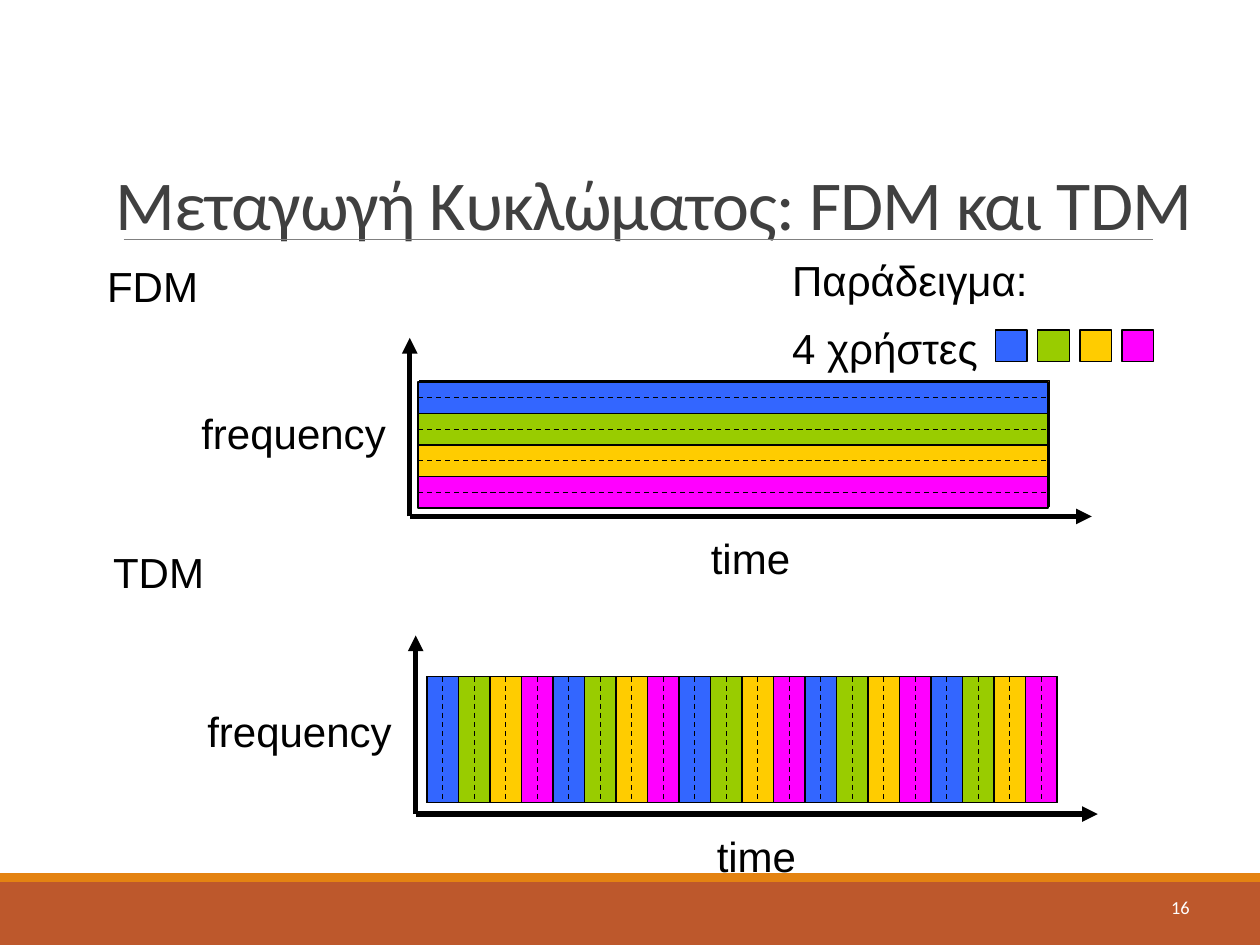
"""Build a slide that compares FDM and TDM circuit switching."""
import pptx
import pptx.util
import pptx.dml.color
import pptx.enum.dml
import pptx.enum.shapes
import pptx.enum.text
import pptx.oxml.ns
import lxml.etree

Cm = pptx.util.Cm
Pt = pptx.util.Pt
ALIGN = pptx.enum.text.PP_ALIGN
ANCHOR = pptx.enum.text.MSO_ANCHOR

HUES = {
    "black": "000000", "white": "FFFFFF", "title": "404040", "rule": "808080",
    "rust": "BD582C", "orange": "E48312", "blue": "3366FF", "green": "99CC00",
    "yellow": "FFCC00", "pink": "FF00FF",
}
USERS = ["blue", "green", "yellow", "pink"]
TITLE = "Μεταγωγή Κυκλώματος: FDM και TDM"
NOTES = [("4 χρήστες", 15.72, 6.38, 4.27), ("Παράδειγμα:", 15.72, 5.0, 5.26)]
PLOTS = [
    {"name": "FDM", "tag": (1.91, 5.13), "zero": (8.26, 10.41),
     "back": (8.46, 7.67), "grid": (8.43, 7.7), "rounds": 1, "across": True},
    {"name": "TDM", "tag": (2.03, 10.9), "zero": (8.38, 16.41),
     "back": (8.61, 13.64), "grid": (8.61, 13.64), "rounds": 5, "across": False},
]
WIDE, HIGH, STEP = 12.7, 2.54, 0.635
LABEL = {"size": Pt(24), "name": "Arial"}
PAGE = {"size": Pt(10.5), "name": "Calibri"}
HEAD = {"size": Pt(40), "name": "Calibri"}


def tint(name):
    return pptx.dml.color.RGBColor.from_string(HUES[name])


def apply(thing, look):
    for key, value in look.items():
        setattr(thing, key, value)


def write(frame, text, font, hue, box, para):
    apply(frame, box)
    line = frame.paragraphs[0]
    apply(line, para)
    run = line.add_run()
    run.text = text
    apply(run.font, font)
    run.font.color.rgb = tint(hue)
    return run


def label(slide, text, left, top, wide):
    shape = slide.shapes.add_textbox(Cm(left), Cm(top), Cm(wide), Cm(1.27))
    write(shape.text_frame, text, LABEL, "black", {"word_wrap": False}, {})


def block(slide, left, top, wide, high, hue, edge=True):
    kind = pptx.enum.shapes.MSO_SHAPE.RECTANGLE
    shape = slide.shapes.add_shape(kind, Cm(left), Cm(top), Cm(wide), Cm(high))
    shape.shadow.inherit = False
    shape.fill.solid()
    shape.fill.fore_color.rgb = tint(hue)
    if edge:
        shape.line.color.rgb = tint("black")
        shape.line.width = Pt(0.75)
    else:
        shape.line.fill.background()


def stroke(slide, start, end, hue="black", width=0.75, dash=False, arrow=False):
    kind = pptx.enum.shapes.MSO_CONNECTOR.STRAIGHT
    ends = [Cm(value) for value in (*start, *end)]
    line = slide.shapes.add_connector(kind, *ends)
    line.line.color.rgb = tint(hue)
    line.line.width = Pt(width)
    if dash:
        line.line.dash_style = pptx.enum.dml.MSO_LINE.DASH
    qn = pptx.oxml.ns.qn
    if arrow:
        pen = line.line._get_or_add_ln()
        lxml.etree.SubElement(pen, qn("a:tailEnd"), type="triangle")
    lxml.etree.SubElement(line._element.spPr, qn("a:effectLst"))


def frame(slide):
    block(slide, 0, 17.78, 25.4, 1.27, "rust", edge=False)
    block(slide, 0, 17.6, 25.4, 0.18, "orange", edge=False)
    stroke(slide, (2.49, 4.83), (23.24, 4.83), "rule", 0.5)
    title = slide.shapes.title
    apply(title, {"left": Cm(2.08), "top": Cm(1.88),
                  "width": Cm(23.52), "height": Cm(3.18)})
    box = {"vertical_anchor": ANCHOR.BOTTOM, "word_wrap": True,
           "auto_size": pptx.enum.text.MSO_AUTO_SIZE.NONE}
    para = {"alignment": ALIGN.LEFT, "line_spacing": 0.85}
    run = write(title.text_frame, TITLE, HEAD, "title", box, para)
    run.font._element.set("spc", "-50")
    page = slide.shapes.add_textbox(Cm(21.49), Cm(17.78), Cm(2.74), Cm(1.02))
    write(page.text_frame, "16", PAGE, "white",
          {"vertical_anchor": ANCHOR.MIDDLE, "word_wrap": True},
          {"alignment": ALIGN.RIGHT})


def cut(slide, plot, shift, dash):
    left, top = plot["grid"]
    if plot["across"]:
        start, end = (left, top + shift), (left + WIDE, top + shift)
    else:
        start, end = (left + shift, top), (left + shift, top + HIGH)
    stroke(slide, start, end, dash=dash)


def draw(slide, plot):
    x, y = plot["zero"]
    label(slide, plot["name"], *plot["tag"], 2.34)
    label(slide, "frequency", x - 4.45, y - 2.31, 4.22)
    label(slide, "time", x + 5.82, y + 0.2, 2.11)
    for end in [(x, y - 3.6), (x + 13.75, y)]:
        stroke(slide, (x, y), end, width=3, arrow=True)
    block(slide, *plot["back"], WIDE, HIGH, "orange")
    left, top = plot["grid"]
    hues = USERS * plot["rounds"]
    for spot, hue in enumerate(hues):
        shift = spot * STEP
        if plot["across"]:
            block(slide, left, top + shift, WIDE, STEP, hue)
        else:
            block(slide, left + shift, top, STEP, HIGH, hue)
    for spot in range(len(hues)):
        if spot:
            cut(slide, plot, spot * STEP, False)
        cut(slide, plot, (spot + 0.5) * STEP, True)


def main():
    deck = pptx.Presentation()
    apply(deck, {"slide_width": Cm(25.4), "slide_height": Cm(19.05)})
    slide = deck.slides.add_slide(deck.slide_layouts[5])
    frame(slide)
    for plot in PLOTS:
        draw(slide, plot)
    for note in NOTES:
        label(slide, *note)
    for spot, hue in enumerate(USERS):
        block(slide, 20.07 + spot * 0.85, 6.65, STEP, STEP, hue)
    deck.save("out.pptx")


if __name__ == "__main__":
    main()
